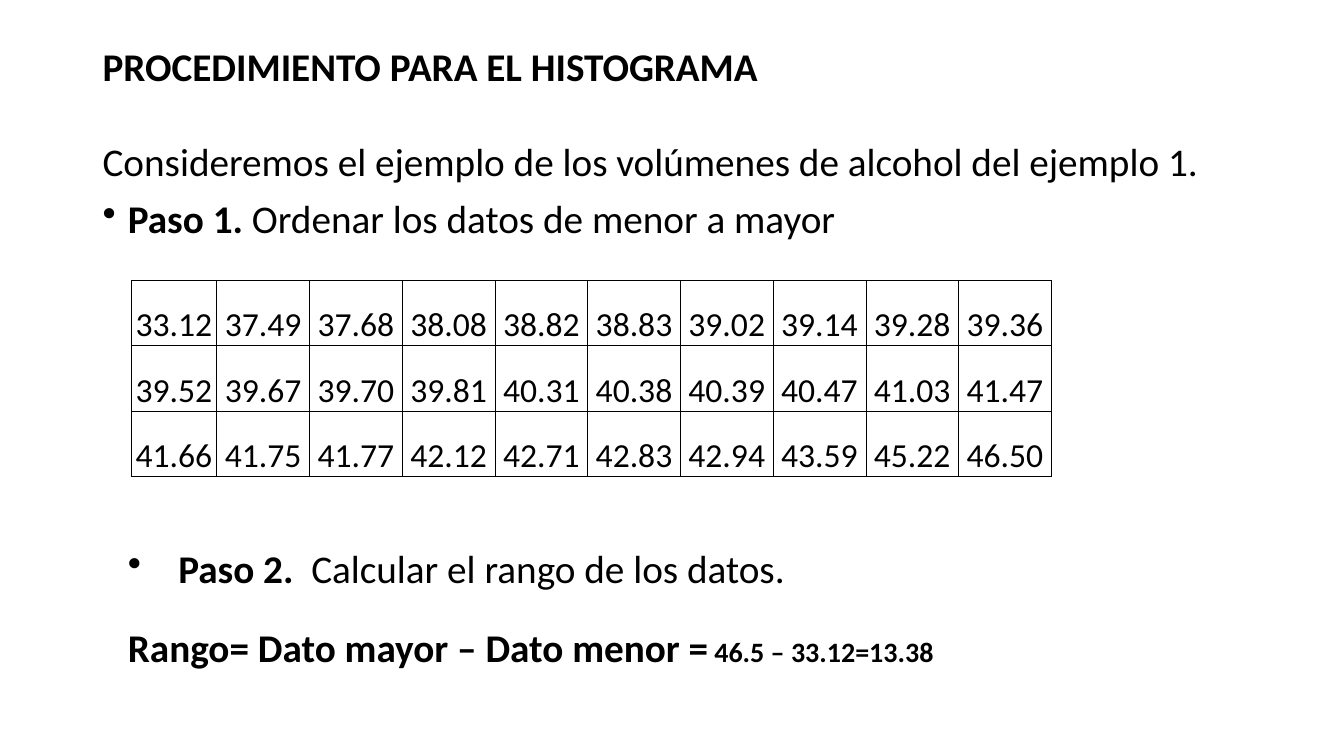
from dataclasses import dataclass

from lxml.etree import SubElement
from pptx import Presentation
from pptx.dml.color import RGBColor
from pptx.enum.text import MSO_ANCHOR, MSO_AUTO_SIZE, PP_ALIGN
from pptx.oxml import parse_xml
from pptx.oxml.ns import nsdecls, qn
from pptx.util import Inches, Pt


@dataclass(frozen=True)
class Theme:
    font: str = "Calibri"
    ink: RGBColor = RGBColor(0, 0, 0)
    body: int = 28
    data: int = 24
    result: int = 20
    border: float = 0.5


THEME = Theme()

VOLUMES = [
    "33.12 37.49 37.68 38.08 38.82 38.83 39.02 39.14 39.28 39.36".split(),
    "39.52 39.67 39.70 39.81 40.31 40.38 40.39 40.47 41.03 41.47".split(),
    "41.66 41.75 41.77 42.12 42.71 42.83 42.94 43.59 45.22 46.50".split(),
]


def style_run(run, size=THEME.body, bold=False):
    run.font.name = THEME.font
    run.font.size = Pt(size)
    run.font.bold = bold
    run.font.color.rgb = THEME.ink


def add_frame(slide, box):
    frame = slide.shapes.add_textbox(*map(Inches, box)).text_frame
    frame.word_wrap = True
    return frame


def write(paragraph, pieces, spacing, before=0, after=0, align=PP_ALIGN.LEFT):
    """Fill a paragraph with (text, size, bold) pieces."""
    for text, size, bold in pieces:
        run = paragraph.add_run()
        run.text = text
        style_run(run, size, bold)
    paragraph.line_spacing = spacing
    paragraph.space_before = Pt(before)
    paragraph.space_after = Pt(after)
    paragraph.alignment = align


def indent(paragraph, left, first=0, bullet=None):
    properties = paragraph._p.get_or_add_pPr()
    properties.set("marL", str(Inches(left)))
    properties.set("indent", str(Inches(first)))
    if bullet:
        SubElement(properties, qn("a:buChar")).set("char", bullet)


def add_heading(slide, box):
    frame = add_frame(slide, box)
    frame.vertical_anchor = MSO_ANCHOR.MIDDLE
    write(frame.paragraphs[0],
          [("PROCEDIMIENTO PARA EL HISTOGRAMA", THEME.body, True)], 0.9)


def add_first_step(slide, box):
    frame = add_frame(slide, box)
    write(frame.paragraphs[0],
          [("Consideremos el ejemplo de los volúmenes de alcohol del ejemplo 1.",
            THEME.body, False)], 0.9, before=10)
    step = frame.add_paragraph()
    write(step, [("Paso 1. ", THEME.body, True),
                 ("Ordenar los datos de menor a mayor", THEME.body, False)],
          0.9, before=10)
    indent(step, 0.25, -0.25, "•")


def add_borders(cell):
    properties = cell._tc.get_or_add_tcPr()
    for position, side in enumerate("LRTB"):
        properties.insert(position, parse_xml(
            f'<a:ln{side} {nsdecls("a")} w="{Pt(THEME.border)}"><a:solidFill>'
            f'<a:srgbClr val="{THEME.ink}"/></a:solidFill></a:ln{side}>'))


def add_volumes(slide, box, first_width=0.85):
    left, top, width, height = map(Inches, box)
    row_count, column_count = len(VOLUMES), len(VOLUMES[0])
    table = slide.shapes.add_table(
        row_count, column_count, left, top, width, height).table
    table.first_row = table.horz_banding = False
    other_width = (width - Inches(first_width)) // (column_count - 1)
    for index, column in enumerate(table.columns):
        column.width = other_width if index else Inches(first_width)
    for row, values in zip(table.rows, VOLUMES):
        for cell, value in zip(row.cells, values):
            cell.text_frame.text = value
            cell.vertical_anchor = MSO_ANCHOR.BOTTOM
            cell.margin_left = cell.margin_right = cell.margin_top = Inches(0.01)
            cell.margin_bottom = 0
            cell.fill.background()
            add_borders(cell)
            volume = cell.text_frame.paragraphs[0]
            volume.alignment = PP_ALIGN.CENTER
            style_run(volume.runs[0], THEME.data)


def add_second_step(slide, box):
    frame = add_frame(slide, box)
    frame.auto_size = MSO_AUTO_SIZE.SHAPE_TO_FIT_TEXT
    step, data_range = frame.paragraphs[0], frame.add_paragraph()
    layout = dict(spacing=1.5, after=6, align=PP_ALIGN.JUSTIFY)
    write(step, [("Paso 2.  ", THEME.body, True),
                 ("Calcular el rango de los datos.", THEME.body, False)], **layout)
    indent(step, 0.75, -0.5, "•")
    write(data_range, [("Rango= Dato mayor – Dato menor =", THEME.body, True),
                       (" 46.5 – 33.12=13.38", THEME.result, True)], **layout)
    indent(data_range, 0.25)


def main():
    deck = Presentation()
    deck.slide_width, deck.slide_height = Inches(13.33), Inches(7.5)
    slide = deck.slides.add_slide(deck.slide_layouts[6])
    add_heading(slide, (0.92, 0.4, 11.5, 0.57))
    add_first_step(slide, (0.92, 1.37, 11.5, 5.51))
    add_volumes(slide, (1.3, 2.78, 9.13, 1.95))
    add_second_step(slide, (0.92, 5.12, 11.78, 1.54))
    deck.save("out.pptx")


if __name__ == "__main__":
    main()
